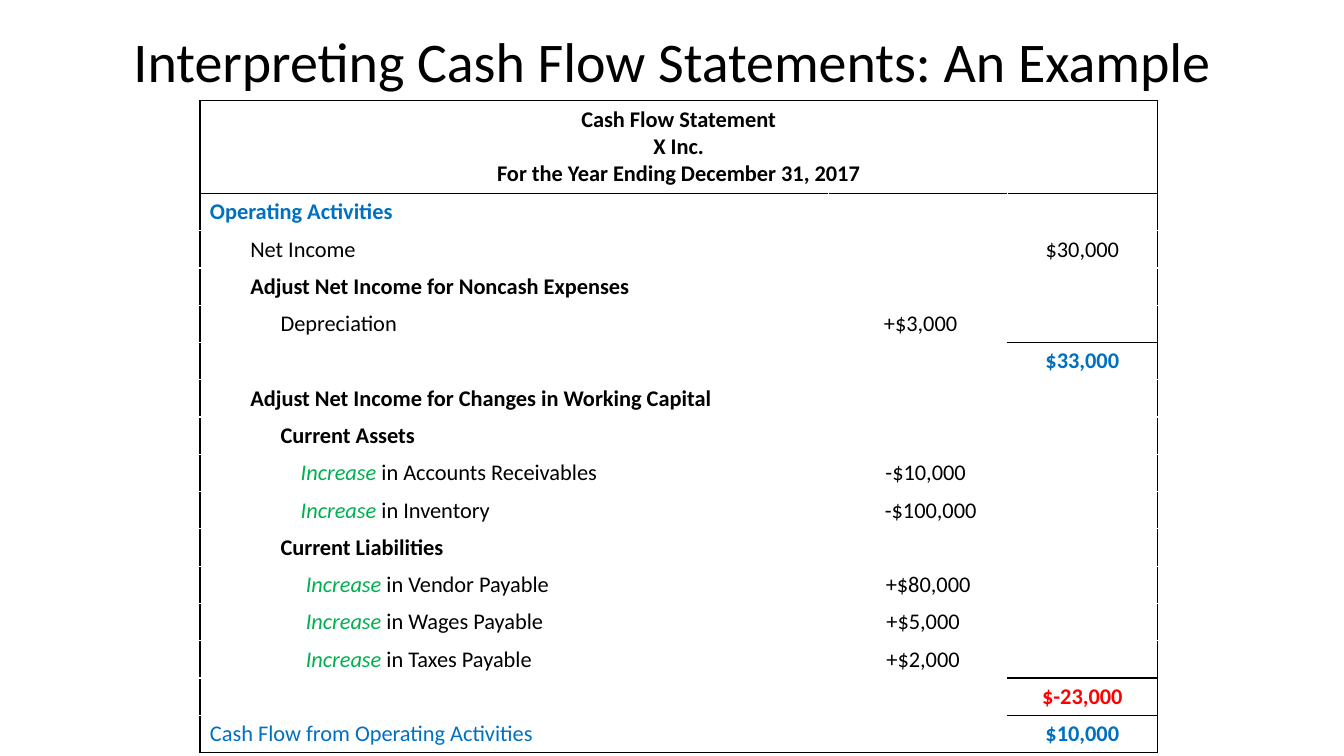
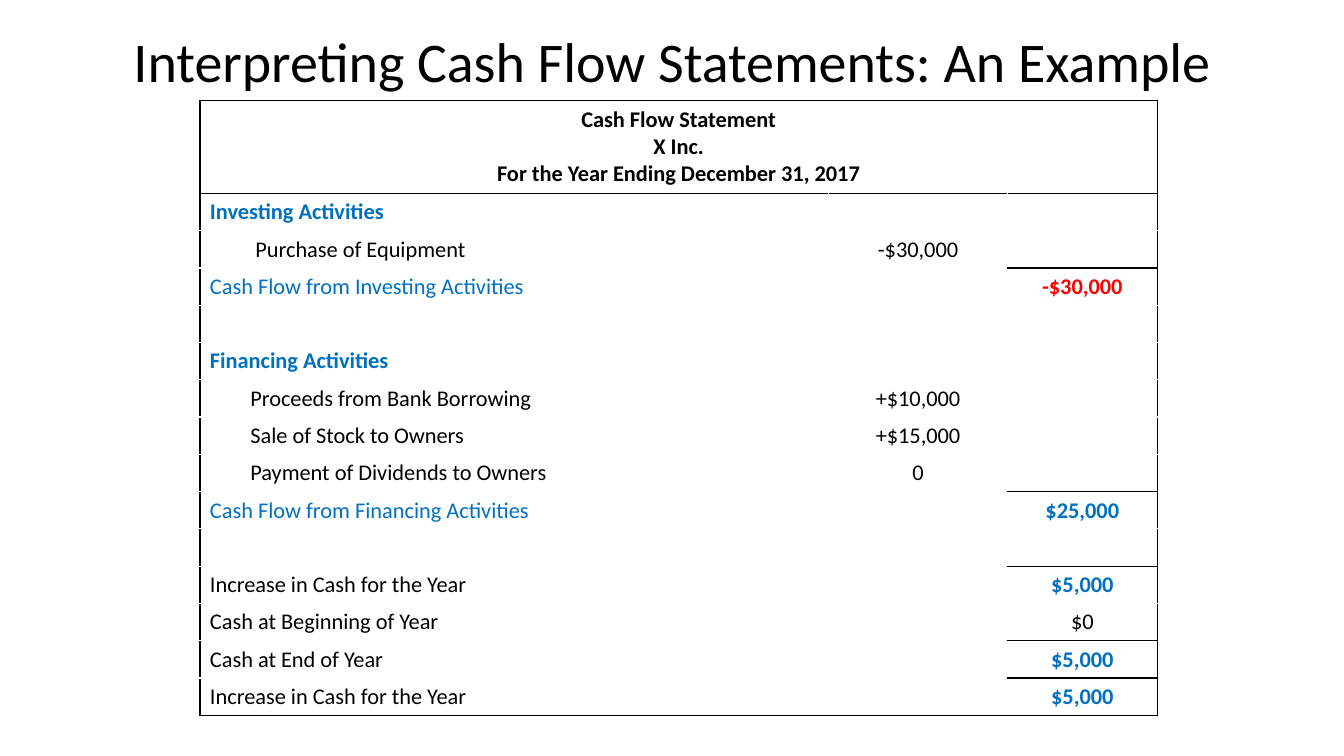
from dataclasses import dataclass

from lxml.etree import SubElement
from pptx import Presentation
from pptx.dml.color import RGBColor
from pptx.enum.text import MSO_ANCHOR, PP_ALIGN
from pptx.oxml.ns import qn
from pptx.util import Inches, Pt


@dataclass(frozen=True)
class Theme:
    font: str = "Calibri"
    title_size: int = 40
    body_size: int = 16
    border_width: int = 1
    ink: str = "000000"
    paper: str = "FFFFFF"
    positive: str = "0070C0"
    negative: str = "FF0000"
    change: str = "00B050"


@dataclass(frozen=True)
class Line:
    """One line of a statement; insets count steps of INSET_STEP."""
    label: str = ""
    inset: int = 0
    kind: str = "item"
    lead: str = ""
    change: str = ""
    change_inset: int = 0
    amount: str = ""
    total: bool = False


GRID_COLUMNS, GRID_ROWS = 80, 75
TABLE_LEFT, TABLE_TOP = 11.9, 10
TABLE_COLUMNS = (37.44, 10.62, 8.94)
HEADING_HEIGHT, LINE_HEIGHT = 9.2, 3.7
CELL_MARGIN = 0.1
INSET_STEP = 0.05

TITLE = "Interpreting Cash Flow Statements: An Example"
HEADING = "Cash Flow Statement\nX Inc.\nFor the Year Ending December 31, 2017"

OPERATING = [
    Line("Operating Activities", kind="section"),
    Line("Net Income", 8, amount="$30,000"),
    Line("Adjust Net Income for Noncash Expenses", 8, "group"),
    Line("Depreciation", 14, change="+$3,000", change_inset=1),
    Line(amount="$33,000", total=True),
    Line("Adjust Net Income for Changes in Working Capital", 8, "group"),
    Line("Current Assets", 14, "group"),
    Line(" in Accounts Receivables", 18, lead="Increase", change="-$10,000", change_inset=3),
    Line(" in Inventory", 18, lead="Increase", change="-$100,000", change_inset=5),
    Line("Current Liabilities", 14, "group"),
    Line(" in Vendor Payable", 19, lead="Increase", change="+$80,000", change_inset=4),
    Line(" in Wages Payable", 19, lead="Increase", change="+$5,000", change_inset=2),
    Line(" in Taxes Payable", 19, lead="Increase", change="+$2,000", change_inset=2),
    Line(amount="$-23,000", total=True),
    Line("Cash Flow from Operating Activities", kind="result", amount="$10,000", total=True),
]

INVESTING_AND_FINANCING = [
    Line("Investing Activities", kind="section"),
    Line("Purchase of Equipment", 9, change="-$30,000"),
    Line("Cash Flow from Investing Activities", kind="result", amount="-$30,000", total=True),
    Line(),
    Line("Financing Activities", kind="section"),
    Line("Proceeds from Bank Borrowing", 8, change="+$10,000"),
    Line("Sale of Stock to Owners", 8, change="+$15,000"),
    Line("Payment of Dividends to Owners", 8, change="0"),
    Line("Cash Flow from Financing Activities", kind="result", amount="$25,000", total=True),
    Line(),
    Line("Increase in Cash for the Year", amount="$5,000", total=True),
    Line("Cash at Beginning of Year", amount="$0"),
    Line("Cash at End of Year", amount="$5,000", total=True),
    Line("Increase in Cash for the Year", amount="$5,000", total=True),
]


class Deck:
    def __init__(self, theme):
        self.theme = theme
        self.presentation = Presentation()
        self.presentation.slide_width = Inches(13.33)
        self.presentation.slide_height = Inches(7.5)
        self.slide = None

    def across(self, columns):
        return round(self.presentation.slide_width * columns / GRID_COLUMNS)

    def down(self, rows):
        return round(self.presentation.slide_height * rows / GRID_ROWS)

    def add_slide(self):
        self.slide = self.presentation.slides.add_slide(self.presentation.slide_layouts[6])

    def format_run(self, run, size, color, bold=False, italic=False):
        font = run.font
        font.name, font.size = self.theme.font, Pt(size)
        font.bold, font.italic = bold, italic
        font.color.rgb = RGBColor.from_string(color)

    def title(self, text):
        shape = self.slide.shapes.add_textbox(
            self.across(5.5), self.down(-0.9), self.across(69), self.down(14.5))
        text_frame = shape.text_frame
        text_frame.word_wrap = True
        text_frame.vertical_anchor = MSO_ANCHOR.MIDDLE
        text_frame.text = text
        paragraph = text_frame.paragraphs[0]
        paragraph.alignment = PP_ALIGN.CENTER
        paragraph.line_spacing = 0.9
        self.format_run(paragraph.runs[0], self.theme.title_size, self.theme.ink)

    def borders(self, cell, black_sides):
        """Draw the sides named in black_sides (of "LRTB") in ink, the others in paper."""
        properties = cell._tc.get_or_add_tcPr()
        for side in "LRTB":
            border = SubElement(properties, qn(f"a:ln{side}"), w=str(Pt(self.theme.border_width)))
            fill = SubElement(border, qn("a:solidFill"))
            color = self.theme.ink if side in black_sides else self.theme.paper
            SubElement(fill, qn("a:srgbClr"), val=color)
        cell.fill.background()

    def cell_text(self, cell, text, color, bold=False, inset=0, alignment=PP_ALIGN.CENTER, lead=""):
        cell.margin_left = Inches(CELL_MARGIN + inset * INSET_STEP)
        cell.text_frame.text = lead or text
        for paragraph in cell.text_frame.paragraphs:
            paragraph.alignment = alignment
            for run in paragraph.runs:
                run_color = self.theme.change if lead else color
                self.format_run(run, self.theme.body_size, run_color, bold, bool(lead))
            if lead:
                run = paragraph.add_run()
                run.text = text
                self.format_run(run, self.theme.body_size, color, bold)
            if not paragraph.runs:
                size = str(self.theme.body_size * 100)
                SubElement(paragraph._p, qn("a:endParaRPr"), sz=size)

    def statement_line(self, cells, line):
        theme = self.theme
        label, change, amount = cells
        label_color = theme.positive if line.kind in ("section", "result") else theme.ink
        self.cell_text(label, line.label, label_color, line.kind in ("section", "group"),
                       line.inset, PP_ALIGN.LEFT, line.lead)
        self.cell_text(change, line.change, theme.ink, inset=line.change_inset)
        total_color = theme.negative if "-" in line.amount else theme.positive
        self.cell_text(amount, line.amount, total_color if line.total else theme.ink, line.total)

    def statement(self, heading, lines):
        """Add a statement table; every total has a rule above it."""
        height = HEADING_HEIGHT + LINE_HEIGHT * len(lines)
        table = self.slide.shapes.add_table(
            len(lines) + 1, len(TABLE_COLUMNS), self.across(TABLE_LEFT), self.down(TABLE_TOP),
            self.across(sum(TABLE_COLUMNS)), self.down(height)).table
        table.first_row = table.horz_banding = False
        for column, width in zip(table.columns, TABLE_COLUMNS):
            column.width = self.across(width)
        for index, row in enumerate(table.rows):
            row.height = self.down(LINE_HEIGHT if index else HEADING_HEIGHT)

        heading_cells = list(table.rows[0].cells)
        for cell in heading_cells:
            self.borders(cell, "LRTB")
        heading_cells[0].merge(heading_cells[-1])
        self.cell_text(heading_cells[0], heading, self.theme.ink, bold=True)

        for index, line in enumerate(lines):
            cells = list(table.rows[index + 1].cells)
            self.statement_line(cells, line)
            is_last = index == len(lines) - 1
            edges = ("T" if index == 0 else "") + ("B" if is_last else "")
            rules = "T" if line.total else ""
            if not is_last and lines[index + 1].total:
                rules += "B"
            for cell, sides in zip(cells, ("L", "", "R" + rules)):
                self.borders(cell, sides + edges)


def main():
    deck = Deck(Theme())
    for lines in (OPERATING, INVESTING_AND_FINANCING):
        deck.add_slide()
        deck.title(TITLE)
        deck.statement(HEADING, lines)
    deck.presentation.save("out.pptx")


if __name__ == "__main__":
    main()
